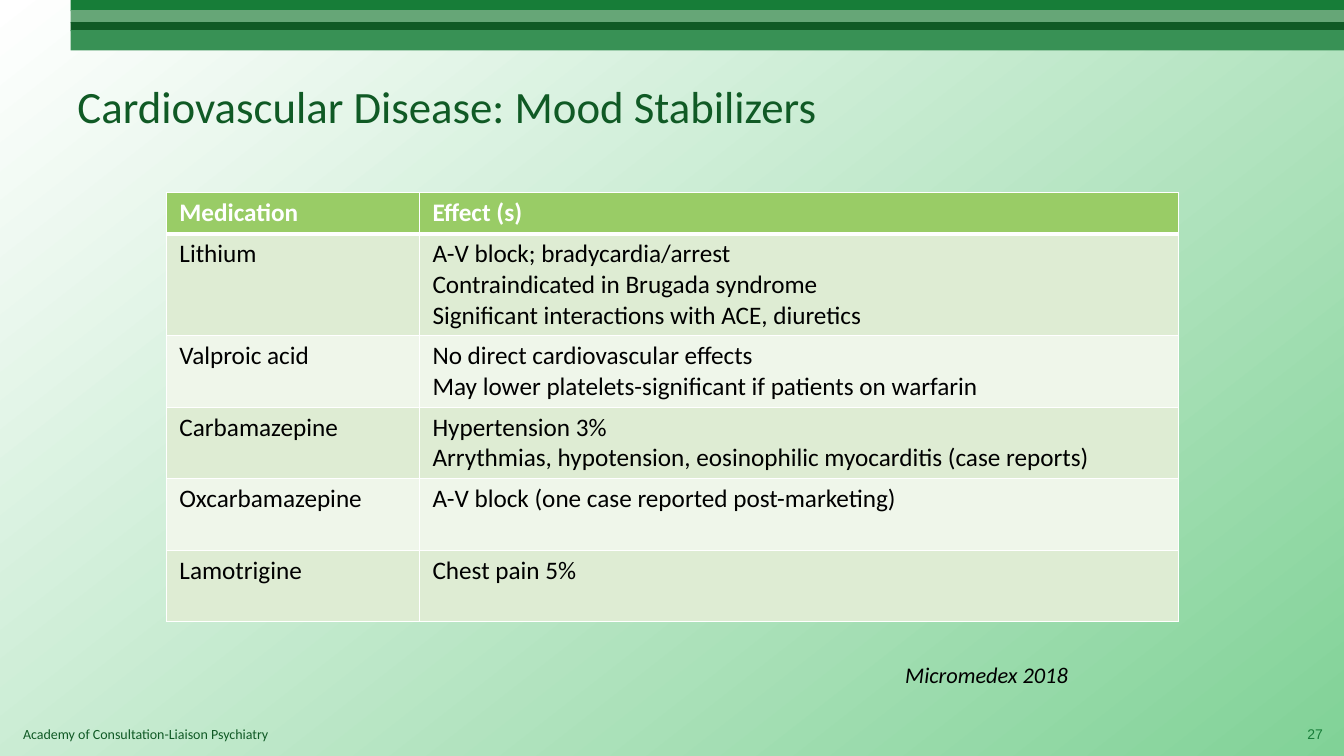
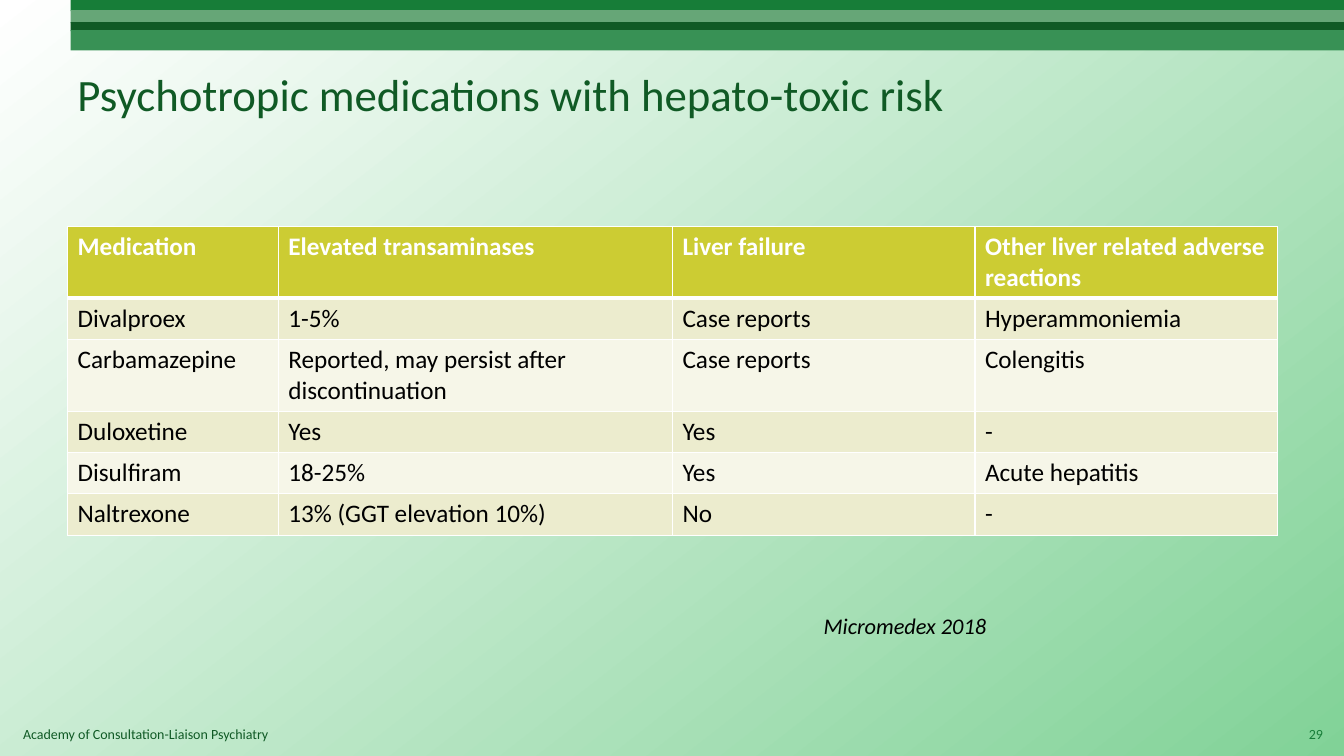
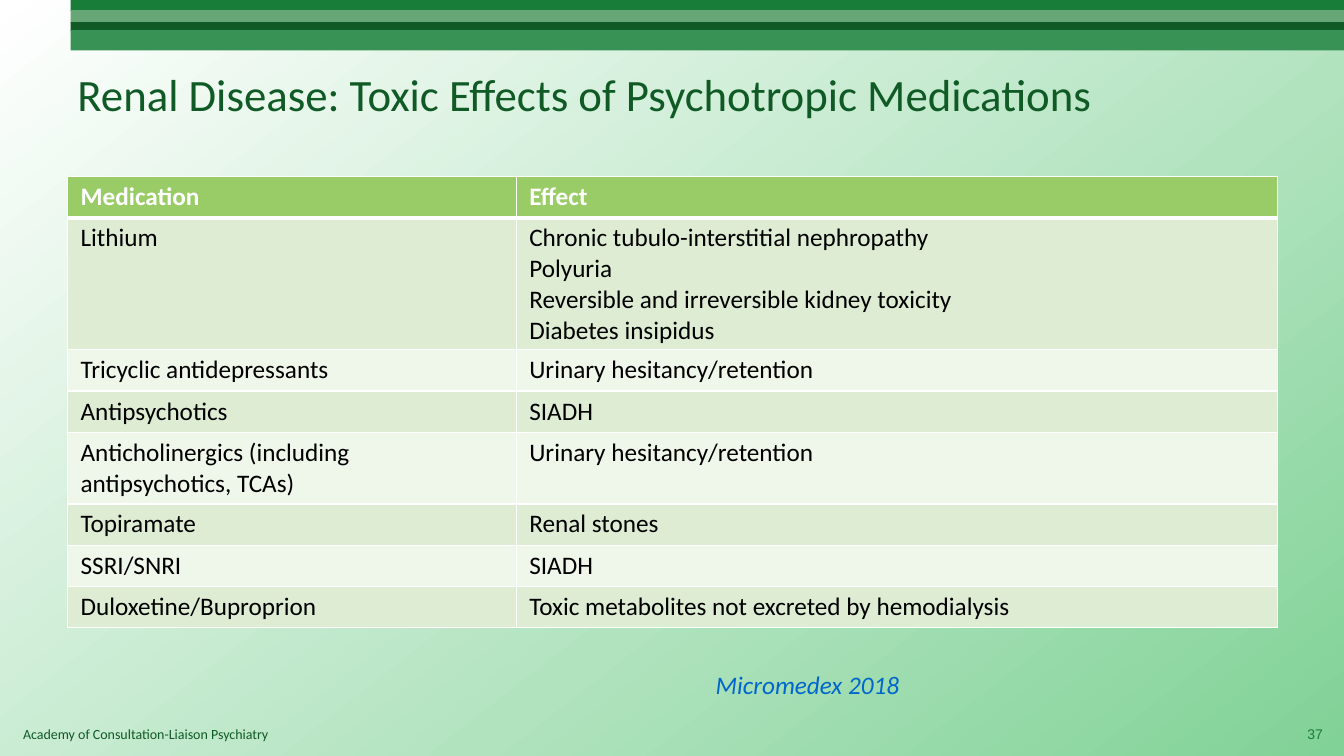
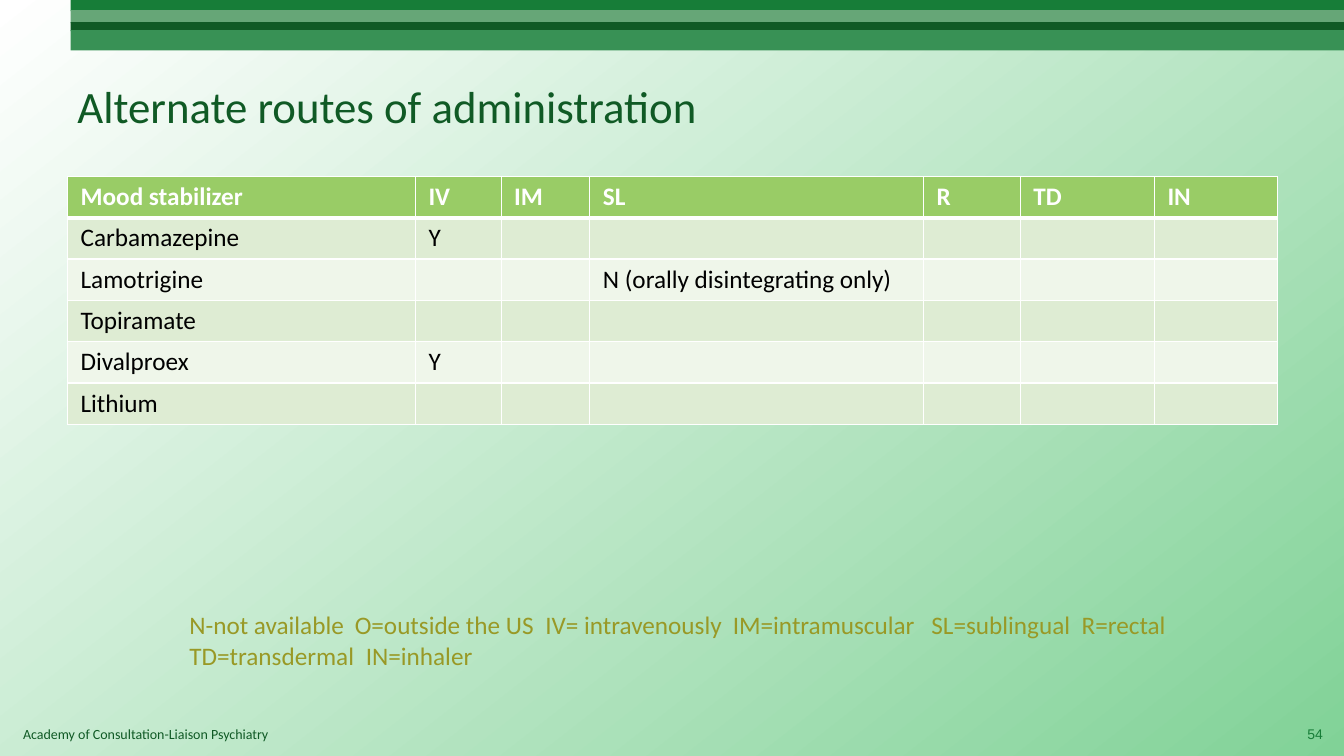
from dataclasses import dataclass

import pptx
import pptx.dml.color
import pptx.enum.shapes
import pptx.enum.text
import pptx.oxml
import pptx.oxml.ns
import pptx.util
from lxml import etree

Inches = pptx.util.Inches
Pt = pptx.util.Pt
Anchor = pptx.enum.text.MSO_ANCHOR
Align = pptx.enum.text.PP_ALIGN


@dataclass(frozen=True)
class Theme:
    font: str = "Calibri"
    number_font: str = "Arial"
    dark: str = "105A25"
    green: str = "177D38"
    pale: str = "66A677"
    mid: str = "389155"
    white: str = "FFFFFF"
    black: str = "000000"
    corner: str = "81D297"
    link: str = "0066CC"
    olive: str = "999926"
    title_size: int = 32
    body_size: int = 18
    source_size: int = 16
    footer_size: int = 10


@dataclass(frozen=True)
class Box:
    left: float
    top: float
    width: float
    height: float

    def lengths(self) -> tuple:
        return tuple(Inches(v) for v in (self.left, self.top, self.width, self.height))


@dataclass(frozen=True)
class Band:
    top: float
    height: float
    color: str


@dataclass(frozen=True)
class Palette:
    header: str
    odd: str
    even: str


@dataclass(frozen=True)
class TableData:
    left: float
    top: float
    columns: tuple[float, ...]
    lines: tuple[int, ...]  # text lines that each row has room for
    rows: tuple[tuple[str, ...], ...]
    palette: Palette
    side_margin: float = 0.13


@dataclass(frozen=True)
class Note:
    box: Box
    text: str
    color: str
    size: int
    italic: bool = True
    tabs: tuple[tuple[float, ...], ...] = ()


@dataclass(frozen=True)
class Page:
    title: str
    title_top: float
    number: str
    table: TableData
    note: Note
    number_font: str = Theme.number_font


THEME = Theme()
GREEN = Palette("99CC66", "DEECD3", "EFF6EA")
YELLOW = Palette("CCCC33", "ECECCE", "F6F6E8")
SLIDE_WIDTH, SLIDE_HEIGHT = 13.33, 7.5
BAND_LEFT = 0.7
BANDS = (
    Band(0, 0.11, THEME.green),
    Band(0.1, 0.13, THEME.pale),
    Band(0.22, 0.09, THEME.dark),
    Band(0.3, 0.2, THEME.mid),
)
LINE_HEIGHT, ROW_PADDING = 0.3, 0.11
THIN, THICK = 1, 3

PAGES = (
    Page(
        "Cardiovascular Disease: Mood Stabilizers", 0.42, "27",
        TableData(
            1.65, 1.91, (2.51, 7.53), (1, 3, 2, 2, 2, 2),
            (
                ("Medication", "Effect (s)"),
                ("Lithium", "A-V block; bradycardia/arrest\n"
                            "Contraindicated in Brugada syndrome\n"
                            "Significant interactions with ACE, diuretics"),
                ("Valproic acid", "No direct cardiovascular effects\n"
                                  "May lower platelets-significant if patients on warfarin"),
                ("Carbamazepine", "Hypertension 3%\n"
                                  "Arrythmias, hypotension, eosinophilic myocarditis (case reports)"),
                ("Oxcarbamazepine", "A-V block (one case reported post-marketing)"),
                ("Lamotrigine", "Chest pain 5%"),
            ),
            GREEN,
        ),
        Note(Box(8.88, 6.51, 2.99, 0.37), "Micromedex 2018", THEME.black, THEME.source_size),
    ),
    Page(
        "Psychotropic medications with hepato-toxic risk", 0.3, "29",
        TableData(
            0.67, 2.25, (2.09, 3.91, 3, 3), (2, 1, 2, 1, 1, 1),
            (
                ("Medication", "Elevated transaminases", "Liver failure",
                 "Other liver related adverse reactions"),
                ("Divalproex", "1-5%", "Case reports", "Hyperammoniemia"),
                ("Carbamazepine", "Reported, may persist after discontinuation",
                 "Case reports", "Colengitis"),
                ("Duloxetine", "Yes", "Yes", "-"),
                ("Disulfiram", "18-25%", "Yes", "Acute hepatitis"),
                ("Naltrexone", "13% (GGT elevation 10%)", "No", "-"),
            ),
            YELLOW, side_margin=0.1,
        ),
        Note(Box(8.07, 6.02, 2.74, 0.37), "Micromedex 2018", THEME.black, THEME.source_size),
        number_font=THEME.font,
    ),
    Page(
        "Renal Disease: Toxic Effects of Psychotropic Medications", 0.3, "37",
        TableData(
            0.67, 1.75, (4.45, 7.55), (1, 4, 1, 1, 2, 1, 1, 1),
            (
                ("Medication", "Effect"),
                ("Lithium", "Chronic tubulo-interstitial nephropathy\nPolyuria\n"
                            "Reversible and irreversible kidney toxicity\nDiabetes insipidus"),
                ("Tricyclic antidepressants", "Urinary hesitancy/retention"),
                ("Antipsychotics", "SIADH"),
                ("Anticholinergics (including antipsychotics, TCAs)",
                 "Urinary hesitancy/retention"),
                ("Topiramate", "Renal stones"),
                ("SSRI/SNRI", "SIADH"),
                ("Duloxetine/Buproprion", "Toxic metabolites not excreted by hemodialysis"),
            ),
            GREEN,
        ),
        Note(Box(7, 6.59, 5.33, 0.4), "Micromedex 2018", THEME.link, THEME.body_size),
    ),
    Page(
        "Alternate routes of administration", 0.42, "54",
        TableData(
            0.67, 1.75, (3.45, 0.85, 0.88, 3.31, 0.96, 1.33, 1.22), (1,) * 6,
            (
                ("Mood stabilizer", "IV", "IM", "SL", "R", "TD", "IN"),
                ("Carbamazepine", "Y"),
                ("Lamotrigine", "", "", "N (orally disintegrating only)"),
                ("Topiramate",),
                ("Divalproex", "Y"),
                ("Lithium",),
            ),
            GREEN,
        ),
        Note(
            Box(1.78, 6, 10.22, 0.71),
            "N-not available\tO=outside the US\tIV= intravenously\tIM=intramuscular"
            "\tSL=sublingual\tR=rectal\nTD=transdermal\tIN=inhaler",
            THEME.olive, THEME.body_size, italic=False,
            tabs=((1.64, 3.53, 5.39, 7.36, 8.85), (1.75,)),
        ),
    ),
)


def rgb(color: str) -> pptx.dml.color.RGBColor:
    return pptx.dml.color.RGBColor.from_string(color)


def write(tf, text: str, *, size: int, color: str, font: str = THEME.font, bold: bool = False,
          italic: bool = False, align=Align.LEFT, tabs: tuple = ()) -> None:
    """Fill a text frame, one paragraph a line; tabs holds the stops of each paragraph."""
    tf.text = text
    for i, p in enumerate(tf.paragraphs):
        if i < len(tabs):
            stops = etree.SubElement(p._p.get_or_add_pPr(), pptx.oxml.ns.qn("a:tabLst"))
            for stop in tabs[i]:
                etree.SubElement(stops, pptx.oxml.ns.qn("a:tab"),
                                 pos=str(Inches(stop)), algn="l")
        p.alignment = align
        for f in [p.font] + [r.font for r in p.runs]:
            f.name, f.size, f.bold, f.italic = font, Pt(size), bold, italic
            f.color.rgb = rgb(color)


def add_text(slide, box: Box, text: str, *, anchor=Anchor.TOP, **fmt) -> None:
    tf = slide.shapes.add_textbox(*box.lengths()).text_frame
    tf.word_wrap = True
    tf.vertical_anchor = anchor
    write(tf, text, **fmt)


def set_background(slide) -> None:
    fill = slide.background.fill
    fill.gradient()
    fill.gradient_angle = 360 - 52
    for stop, position, color in zip(fill.gradient_stops, (0, 1), (THEME.white, THEME.corner)):
        stop.position = position
        stop.color.rgb = rgb(color)


def add_frame(slide, page: Page) -> None:
    """Draw what every slide shares: background, bands, footer, title and number."""
    set_background(slide)
    for band in BANDS:
        box = Box(BAND_LEFT, band.top, SLIDE_WIDTH - BAND_LEFT, band.height)
        sp = slide.shapes.add_shape(pptx.enum.shapes.MSO_SHAPE.RECTANGLE, *box.lengths())
        sp.shadow.inherit = False
        sp.fill.solid()
        sp.fill.fore_color.rgb = rgb(band.color)
        sp.line.fill.background()
    add_text(slide, Box(0.13, 7.15, 9.25, 0.27), "Academy of Consultation-Liaison Psychiatry",
             size=THEME.footer_size, color=THEME.dark)
    add_text(slide, Box(0.67, page.title_top, 12, 1.25), page.title, anchor=Anchor.MIDDLE,
             size=THEME.title_size, color=THEME.dark)
    add_text(slide, Box(12.69, 7.08, 0.53, 0.4), page.number, anchor=Anchor.MIDDLE,
             align=Align.RIGHT, font=page.number_font, size=THEME.footer_size,
             color=THEME.green)


def set_borders(cell, top: int, bottom: int) -> None:
    tcPr = cell._tc.get_or_add_tcPr()
    for side, width in (("L", THIN), ("R", THIN), ("T", top), ("B", bottom)):
        ln = etree.SubElement(tcPr, pptx.oxml.ns.qn(f"a:ln{side}"), w=str(Pt(width)))
        fill = etree.SubElement(ln, pptx.oxml.ns.qn("a:solidFill"))
        etree.SubElement(fill, pptx.oxml.ns.qn("a:srgbClr"), val=THEME.white)


def add_table(slide, data: TableData) -> None:
    heights = [ROW_PADDING + LINE_HEIGHT * n for n in data.lines]
    box = Box(data.left, data.top, sum(data.columns), sum(heights))
    table = slide.shapes.add_table(len(data.rows), len(data.columns), *box.lengths()).table
    for column, width in zip(table.columns, data.columns):
        column.width = Inches(width)
    for i, (row, height) in enumerate(zip(table.rows, heights)):
        row.height = Inches(height)
        header = i == 0
        color = data.palette.header if header else data.palette.odd if i % 2 else data.palette.even
        for j, cell in enumerate(row.cells):
            set_borders(cell, THICK if i == 1 else THIN, THICK if header else THIN)
            cell.fill.solid()
            cell.fill.fore_color.rgb = rgb(color)
            cell.margin_left = cell.margin_right = Inches(data.side_margin)
            cell.margin_top = cell.margin_bottom = Inches(0.05)
            text = data.rows[i][j] if j < len(data.rows[i]) else ""
            write(cell.text_frame, text, size=THEME.body_size, bold=header,
                  color=THEME.white if header else THEME.black)


def main() -> None:
    prs = pptx.Presentation()
    prs.slide_width, prs.slide_height = Inches(SLIDE_WIDTH), Inches(SLIDE_HEIGHT)
    for page in PAGES:
        slide = prs.slides.add_slide(prs.slide_layouts[6])
        add_frame(slide, page)
        add_table(slide, page.table)
        note = page.note
        add_text(slide, note.box, note.text, size=note.size, color=note.color,
                 italic=note.italic, tabs=note.tabs)
    prs.save("out.pptx")


if __name__ == "__main__":
    main()
